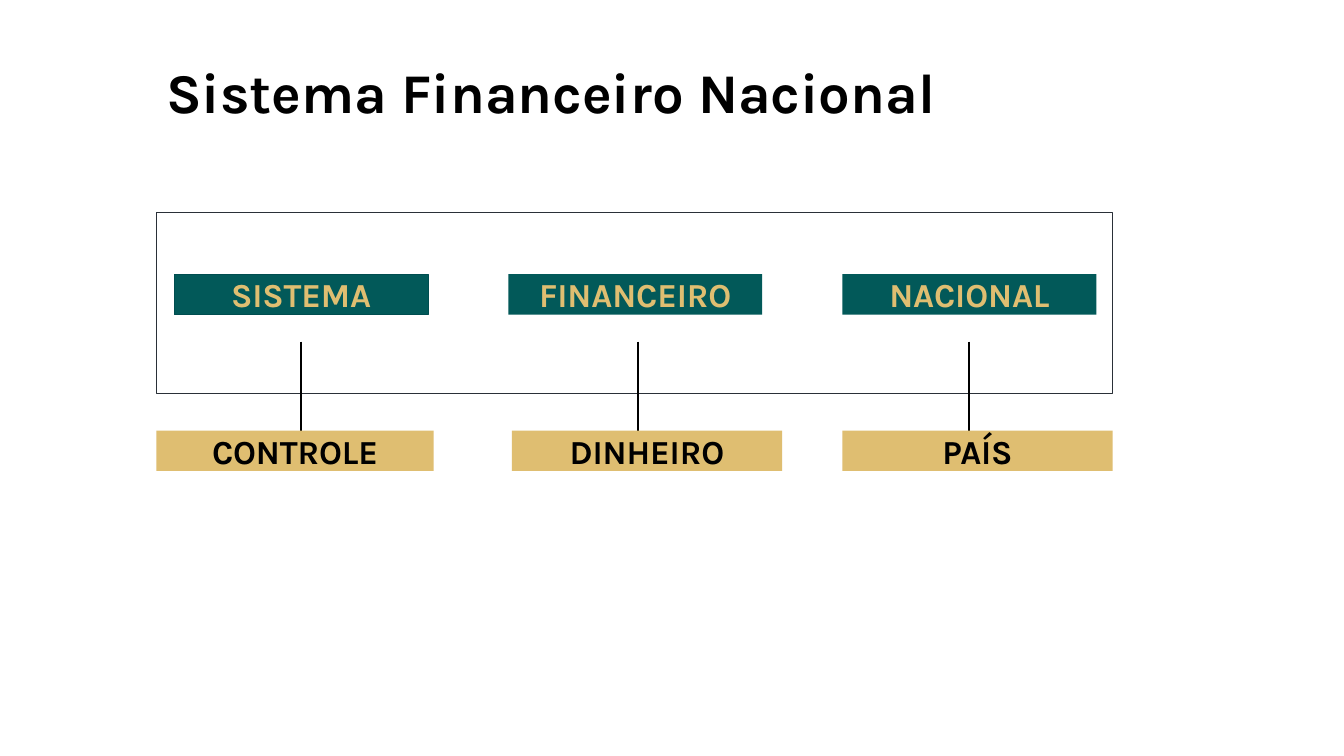
from lxml import etree
from pptx import Presentation
from pptx.dml.color import RGBColor
from pptx.enum.shapes import MSO_CONNECTOR, MSO_SHAPE
from pptx.enum.text import MSO_ANCHOR, MSO_AUTO_SIZE, PP_ALIGN
from pptx.oxml.ns import qn
from pptx.util import Cm, Pt

RECTANGLE = MSO_SHAPE.RECTANGLE
STRAIGHT = MSO_CONNECTOR.STRAIGHT
TOP = MSO_ANCHOR.TOP
GROW = MSO_AUTO_SIZE.SHAPE_TO_FIT_TEXT
CENTER = PP_ALIGN.CENTER

TITLE = "Sistema Financeiro Nacional"
FONT = "Karla"
COLORS = {
    "black": "000000",
    "frame": "2A3038",
    "teal": "025959",
    "teal_edge": "004D50",
    "gold": "DFBE71",
}
CONCEPTS = [
    {"term": "SISTEMA", "edge": "teal_edge", "arrow_x": 7.58,
     "meaning": "CONTROLE", "meaning_left": 3.94, "meaning_width": 6.99},
    {"term": "FINANCEIRO", "edge": None, "arrow_x": 16.07,
     "meaning": "DINHEIRO", "meaning_left": 12.9, "meaning_width": 6.81},
    {"term": "NACIONAL", "edge": None, "arrow_x": 24.42,
     "meaning": "PAÍS", "meaning_left": 21.23, "meaning_width": 6.81},
]

TERM_LEFT, TERM_STEP, TERM_TOP, TERM_WIDTH = 4.39, 8.42, 6.91, 6.4
MEANING_TOP = 10.85
LABEL_HEIGHT = 1.02
ARROW_TOP, ARROW_BOTTOM = 8.61, 11.76


def rgb(name):
    return RGBColor.from_string(COLORS[name])


def add_text(paragraph, words, size, color):
    run = paragraph.add_run()
    run.text = words
    run.font.name = FONT
    run.font.size = Pt(size)
    run.font.bold = True
    run.font.color.rgb = rgb(color)
    return run


def add_rectangle(slide, left, top, width, height, fill, edge, edge_width=0.75):
    rectangle = slide.shapes.add_shape(
        RECTANGLE, Cm(left), Cm(top), Cm(width), Cm(height))
    rectangle.shadow.inherit = False
    if fill:
        rectangle.fill.solid()
        rectangle.fill.fore_color.rgb = rgb(fill)
    else:
        rectangle.fill.background()
    if edge:
        rectangle.line.color.rgb = rgb(edge)
        rectangle.line.width = Pt(edge_width)
    else:
        rectangle.line.fill.background()
    return rectangle


def add_label(slide, words, left, top, width, fill, color, edge=None):
    label = add_rectangle(slide, left, top, width, LABEL_HEIGHT, fill, edge)
    frame = label.text_frame
    frame.margin_left = frame.margin_right = 0
    frame.margin_top = frame.margin_bottom = 0
    frame.word_wrap = True
    frame.auto_size = GROW
    frame.vertical_anchor = TOP
    paragraph = frame.paragraphs[0]
    paragraph.alignment = CENTER
    run = add_text(paragraph, words, 24, color)
    run.font._element.set("spc", "-10")


def add_arrow(slide, x):
    arrow = slide.shapes.add_connector(
        STRAIGHT, Cm(x), Cm(ARROW_TOP), Cm(x), Cm(ARROW_BOTTOM))
    arrow.line.color.rgb = rgb("black")
    arrow.line.width = Pt(1.5)
    etree.SubElement(arrow.line._get_or_add_ln(), qn("a:tailEnd"), type="triangle")
    etree.SubElement(arrow._element.spPr, qn("a:effectLst"))


def main():
    deck = Presentation()
    deck.slide_width, deck.slide_height = Cm(33.87), Cm(19.05)
    slide = deck.slides.add_slide(deck.slide_layouts[6])

    title = slide.shapes.add_textbox(Cm(3.94), Cm(1.32), Cm(22.17), Cm(1.96))
    title.text_frame.word_wrap = True
    title.text_frame.auto_size = GROW
    add_text(title.text_frame.paragraphs[0], TITLE, 40, "black")

    add_rectangle(slide, 3.94, 5.36, 24.1, 4.55, None, "frame", 0.84)

    for column, concept in enumerate(CONCEPTS):
        add_label(slide, concept["term"], TERM_LEFT + column * TERM_STEP,
                  TERM_TOP, TERM_WIDTH, "teal", "gold", concept["edge"])
        add_arrow(slide, concept["arrow_x"])
        add_label(slide, concept["meaning"], concept["meaning_left"],
                  MEANING_TOP, concept["meaning_width"], "gold", "black")

    deck.save("out.pptx")


if __name__ == "__main__":
    main()
